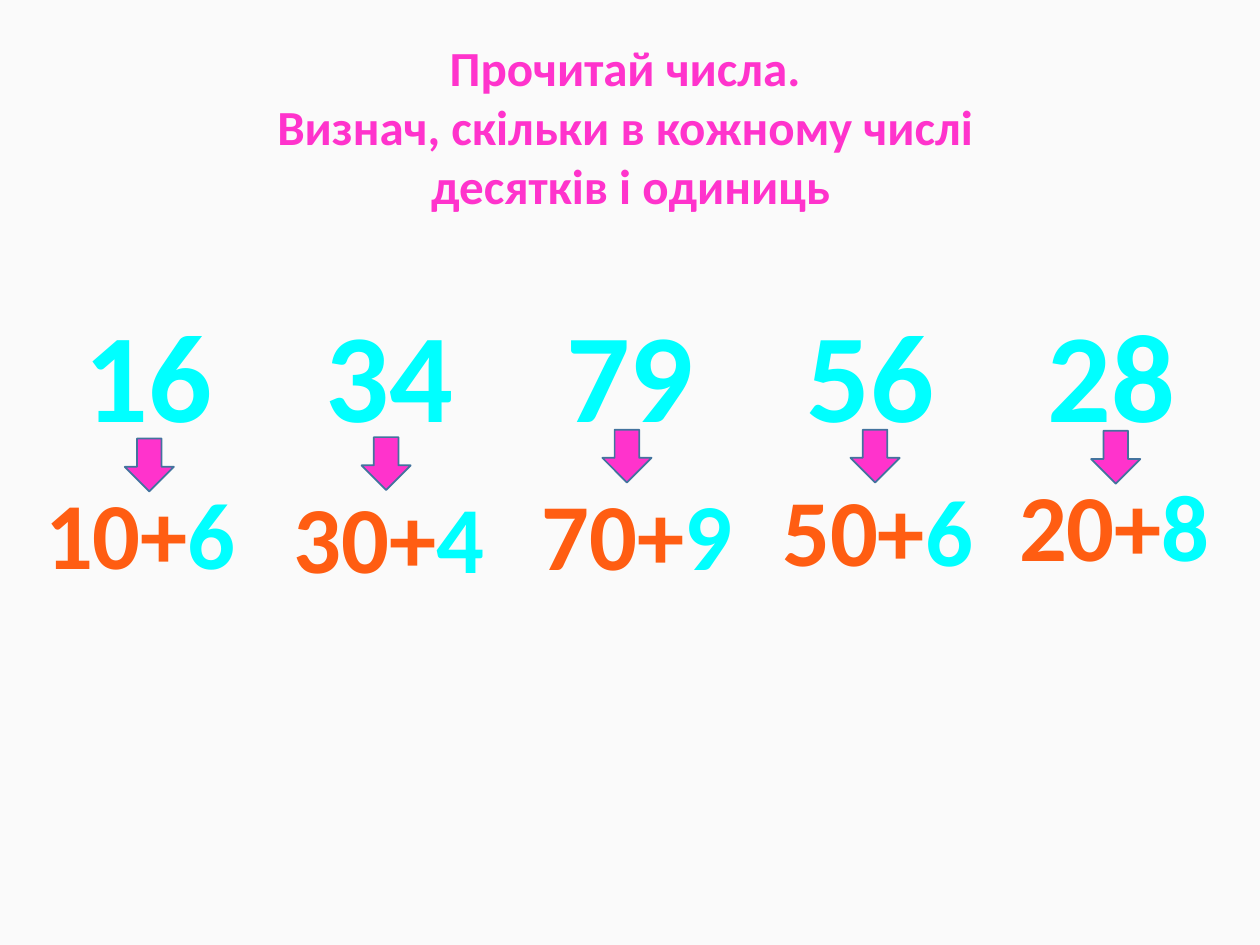
from pptx import Presentation
from pptx.dml.color import RGBColor
from pptx.enum import shapes, text
from pptx.util import Pt

FONT = "Calibri"
COLORS = {
    "background": "FAFAFA",
    "pink": "FF33CC",
    "cyan": "00FFFF",
    "orange": "FF5D12",
    "outline": "43739E",
}
TITLE = [
    "Прочитай числа. ",
    "Визнач, скільки в кожному числі ",
    "десятків і одиниць",
]
# number, arrow (left, top), sum (left, top), in points
COLUMNS = [
    (16, (71.3, 250.6), (15.1, 267.8)),
    (34, (206.6, 249.8), (157, 270)),
    (79, (344.2, 245.5), (298.8, 268.6)),
    (56, (486, 245.5), (436.3, 266.4)),
    (28, (623.5, 246.2), (571.7, 263.5)),
]
NUMBER_STEP = 137.6
NUMBER_WIDTH = 110
SLIDE_CENTER = 360


def color(name):
    return RGBColor.from_string(COLORS[name])


def add_run(p, content, size, color_name):
    r = p.add_run()
    r.text = content
    r.font.name = FONT
    r.font.size = Pt(size)
    r.font.bold = True
    r.font.color.rgb = color(color_name)


def set_title(s, lines):
    sp = s.shapes.title
    sp.left, sp.top, sp.width, sp.height = Pt(149), Pt(18), Pt(422.6), Pt(108.7)
    tf = sp.text_frame
    tf.word_wrap = False
    tf.auto_size = text.MSO_AUTO_SIZE.SHAPE_TO_FIT_TEXT
    tf.vertical_anchor = text.MSO_ANCHOR.TOP
    for i, line in enumerate(lines):
        p = tf.paragraphs[0] if i == 0 else tf.add_paragraph()
        p.alignment = text.PP_ALIGN.CENTER
        add_run(p, line, 28, "pink")


def add_label(s, left, top, width, height, size, runs):
    """Add a centred one-line text box from (text, colour name) runs."""
    sp = s.shapes.add_textbox(Pt(left), Pt(top), Pt(width), Pt(height))
    tf = sp.text_frame
    tf.word_wrap = True
    tf.auto_size = text.MSO_AUTO_SIZE.SHAPE_TO_FIT_TEXT
    p = tf.paragraphs[0]
    p.alignment = text.PP_ALIGN.CENTER
    for content, color_name in runs:
        add_run(p, content, size, color_name)


def add_down_arrow(s, left, top):
    sp = s.shapes.add_shape(
        shapes.MSO_SHAPE.DOWN_ARROW, Pt(left), Pt(top), Pt(28.1), Pt(30.2))
    sp.shadow.inherit = False
    sp.fill.solid()
    sp.fill.fore_color.rgb = color("pink")
    sp.line.color.rgb = color("outline")
    sp.line.width = Pt(1)


def main():
    prs = Presentation()
    prs.slide_width, prs.slide_height = Pt(720), Pt(540)
    s = prs.slides.add_slide(prs.slide_layouts[5])
    s.background.fill.solid()
    s.background.fill.fore_color.rgb = color("background")

    set_title(s, TITLE)
    middle = len(COLUMNS) // 2
    for i, (number, arrow_at, sum_at) in enumerate(COLUMNS):
        center = SLIDE_CENTER + (i - middle) * NUMBER_STEP
        add_label(s, center - NUMBER_WIDTH / 2, 165.6, NUMBER_WIDTH, 94.3, 72,
                  [(str(number), "cyan")])
        add_down_arrow(s, *arrow_at)
        units = number % 10
        add_label(s, *sum_at, 130.3, 72.7, 54,
                  [(f"{number - units}+", "orange"), (str(units), "cyan")])

    prs.save("out.pptx")


if __name__ == "__main__":
    main()
